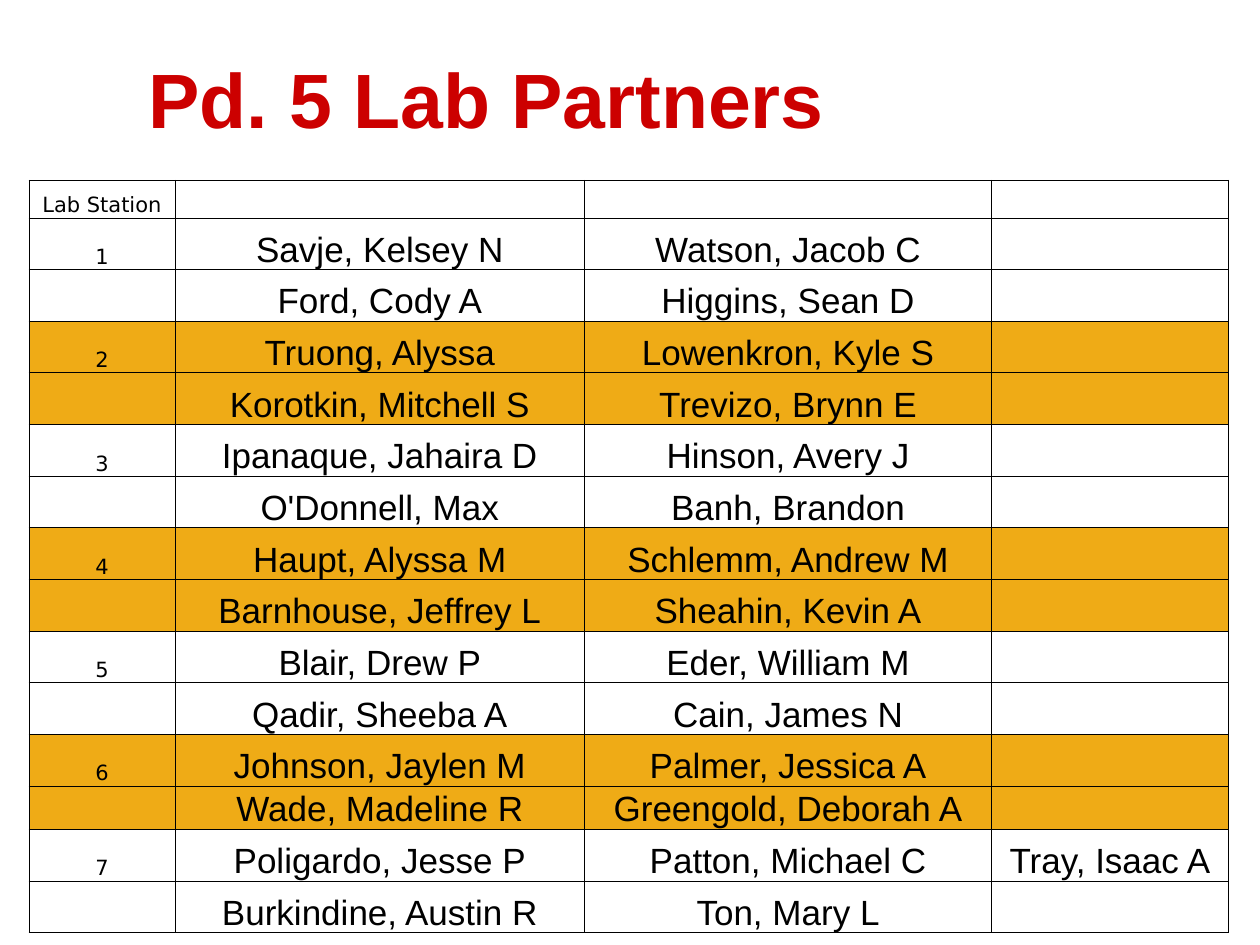
from dataclasses import dataclass

from lxml import etree
from pptx import Presentation
from pptx.dml.color import RGBColor
from pptx.enum.text import MSO_ANCHOR, PP_ALIGN
from pptx.oxml.ns import qn
from pptx.table import _Cell
from pptx.text.text import _Paragraph
from pptx.util import Inches, Pt

BOTTOM = MSO_ANCHOR.BOTTOM
TOP = MSO_ANCHOR.TOP
CENTER = PP_ALIGN.CENTER
LEFT = PP_ALIGN.LEFT


@dataclass(frozen=True)
class Theme:
    heading: str = "CC0000"
    ink: str = "000000"
    paper: str = "FFFFFF"
    band: str = "EFAB16"
    name_font: str = "Arial"
    station_font: str = "DejaVu Sans"
    title_size: int = 44
    name_size: int = 20
    station_size: int = 12
    rule_width: float = 0.5


@dataclass(frozen=True)
class Station:
    number: int
    teams: tuple[tuple[str, ...], ...]


THEME = Theme()
WIDTH, HEIGHT = Inches(10), Inches(7.5)
COLUMNS = (1.16, 3.25, 3.23, 1.88)
HEADER_HEIGHT, ROW_HEIGHT, SHORT_ROW_HEIGHT = 0.3, 0.41, 0.34
SHORT_ROW = 12
INSET = Inches(0.01)

STATIONS = (
    Station(1, (("Savje, Kelsey N", "Watson, Jacob C"),
                ("Ford, Cody A", "Higgins, Sean D"))),
    Station(2, (("Truong, Alyssa", "Lowenkron, Kyle S"),
                ("Korotkin, Mitchell S", "Trevizo, Brynn E"))),
    Station(3, (("Ipanaque, Jahaira D", "Hinson, Avery J"),
                ("O'Donnell, Max", "Banh, Brandon"))),
    Station(4, (("Haupt, Alyssa M", "Schlemm, Andrew M"),
                ("Barnhouse, Jeffrey L", "Sheahin, Kevin A"))),
    Station(5, (("Blair, Drew P", "Eder, William M"),
                ("Qadir, Sheeba A", "Cain, James N"))),
    Station(6, (("Johnson, Jaylen M", "Palmer, Jessica A"),
                ("Wade, Madeline R", "Greengold, Deborah A"))),
    Station(7, (("Poligardo, Jesse P", "Patton, Michael C", "Tray, Isaac A"),
                ("Burkindine, Austin R", "Ton, Mary L"))),
)


def write(paragraph: _Paragraph, text: str, *, font: str, size: int,
          color: str = THEME.ink, bold: bool = False,
          align: PP_ALIGN = CENTER) -> None:
    paragraph.alignment = align
    run = paragraph.add_run()
    run.text = text
    run.font.name = font
    run.font.size = Pt(size)
    run.font.bold = bold
    run.font.color.rgb = RGBColor.from_string(color)


def rule_cell(cell: _Cell) -> None:
    """Draw a thin line on all four sides of the cell."""
    properties = cell._tc.get_or_add_tcPr()
    for side in ("lnL", "lnR", "lnT", "lnB"):
        line = etree.SubElement(properties, qn(f"a:{side}"),
                                w=str(Pt(THEME.rule_width)))
        fill = etree.SubElement(line, qn("a:solidFill"))
        etree.SubElement(fill, qn("a:srgbClr"), val=THEME.ink)


def fill_cell(cell: _Cell, text: str, is_station: bool, banded: bool) -> None:
    cell.margin_left = cell.margin_right = cell.margin_top = INSET
    cell.margin_bottom = 0
    cell.vertical_anchor = BOTTOM
    rule_cell(cell)
    if banded or (text and not is_station):
        cell.fill.solid()
        cell.fill.fore_color.rgb = RGBColor.from_string(
            THEME.band if banded else THEME.paper)
    else:
        cell.fill.background()

    paragraph = cell.text_frame.paragraphs[0]
    if not text:
        # An empty cell must not stretch its row
        etree.SubElement(paragraph._p, qn("a:endParaRPr"),
                         sz=str(THEME.station_size * 100))
    elif is_station:
        write(paragraph, text, font=THEME.station_font, size=THEME.station_size)
    else:
        write(paragraph, text, font=THEME.name_font, size=THEME.name_size)


def add_title(slide, text: str) -> None:
    box = slide.shapes.add_textbox(Inches(1.08), Inches(0.3),
                                   Inches(8.67), Inches(1.25))
    frame = box.text_frame
    frame.word_wrap = True
    frame.vertical_anchor = TOP
    frame.margin_top = Inches(0.11)
    write(frame.paragraphs[0], text, font=THEME.name_font,
          size=THEME.title_size, color=THEME.heading, bold=True, align=LEFT)


def add_roster(slide, stations: tuple[Station, ...]) -> None:
    rows = [(("Lab Station",), False)]
    for station in stations:
        for index, team in enumerate(station.teams):
            label = str(station.number) if index == 0 else ""
            rows.append(((label, *team), station.number % 2 == 0))

    heights = [HEADER_HEIGHT] + [ROW_HEIGHT] * (len(rows) - 1)
    heights[SHORT_ROW] = SHORT_ROW_HEIGHT
    table = slide.shapes.add_table(
        len(rows), len(COLUMNS), Inches(0.23), Inches(1.43),
        Inches(sum(COLUMNS)), Inches(sum(heights))).table
    table.first_row = table.horz_banding = False
    for column, width in zip(table.columns, COLUMNS):
        column.width = Inches(width)
    for row, height, (texts, banded) in zip(table.rows, heights, rows):
        row.height = Inches(height)
        for index, cell in enumerate(row.cells):
            text = texts[index] if index < len(texts) else ""
            fill_cell(cell, text, index == 0, banded)


def main() -> None:
    deck = Presentation()
    deck.slide_width, deck.slide_height = WIDTH, HEIGHT
    slide = deck.slides.add_slide(deck.slide_layouts[6])
    add_title(slide, "Pd. 5 Lab Partners")
    add_roster(slide, STATIONS)
    deck.save("out.pptx")


if __name__ == "__main__":
    main()
